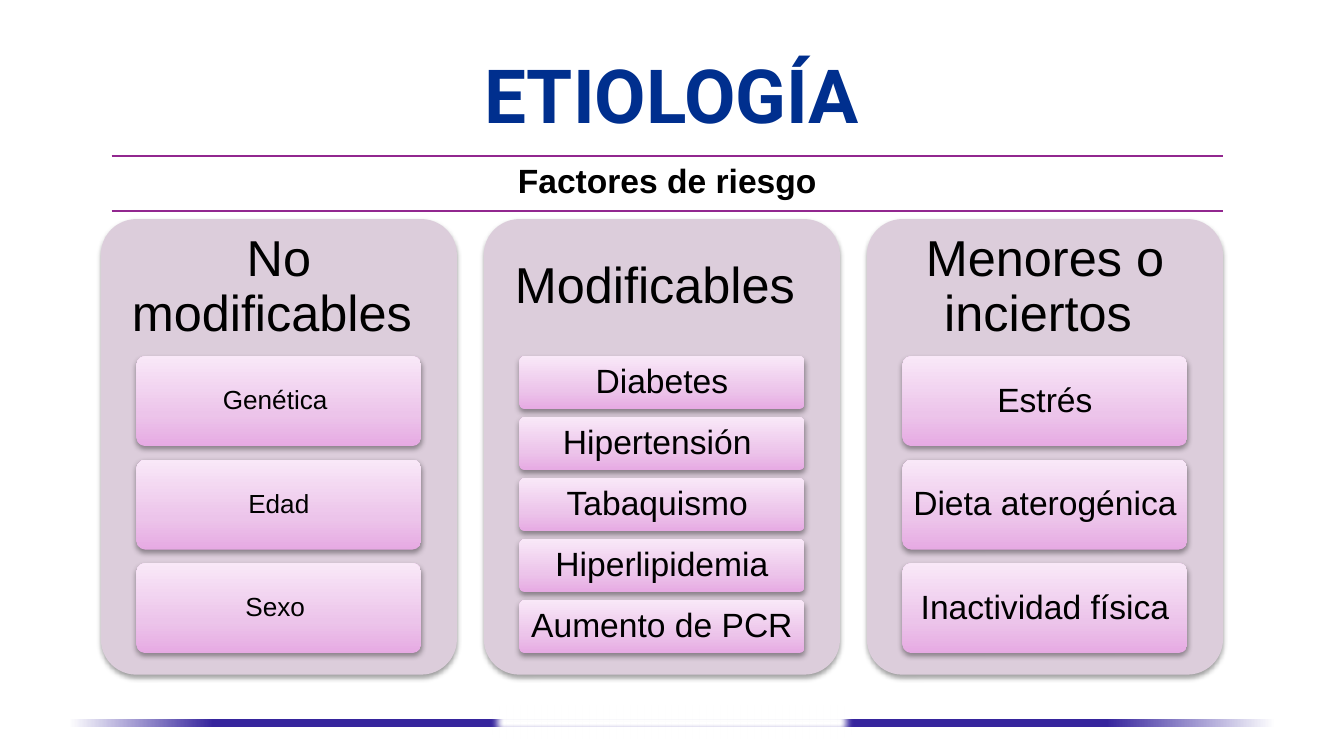
"""Build the slide on aetiology and its three groups of risk factors."""
from pptx import Presentation
from pptx.dml.color import RGBColor
from pptx.enum.shapes import MSO_SHAPE as Shape
from pptx.enum.text import MSO_ANCHOR as Anchor, PP_ALIGN as Align
from pptx.oxml import parse_xml
from pptx.oxml.ns import nsdecls, qn
from pptx.util import Inches, Pt

TITLE = "ETIOLOGÍA"
SUBTITLE = "Factores de riesgo"
GROUPS = [
    ("No modificables ", 14, ["Genética ", "Edad", "Sexo "]),
    ("Modificables ", 18, ["Diabetes", "Hipertensión ", "Tabaquismo ",
                           "Hiperlipidemia", "Aumento de PCR"]),
    ("Menores o inciertos ", 18, ["Estrés", "Dieta aterogénica", "Inactividad física"]),
]
COLORS = {"title": "002F8E", "outline": "FDFCFD", "text": "000000", "rule": "92278F",
          "panel": "DCCDDB", "band": "36259D", "white": "FFFFFF", "shadow": "000000",
          "card_low": "E6AAE3", "card_mid": "ECC4EA", "card_high": "F9E8F8"}
BAND_STOPS = [(0, "white"), (12, "band"), (50, "band"), (86, "band"), (100, "white")]
CARD_STOPS = [(0, "card_low"), (35, "card_mid"), (100, "card_high")]

SLIDE_WIDTH = Inches(10)
PANEL_LEFT, PANEL_TOP, PANEL_WIDTH, PANEL_HEIGHT = 0.75, 1.63, 2.65, 3.39
PANEL_STEP, HEADING_HEIGHT = 2.85, 1.02
CARD_WIDTH, CARDS_HEIGHT, GAP_RATIO = 2.12, 2.21, 0.15


def solid_xml(color):
    return f'<a:solidFill><a:srgbClr val="{COLORS[color]}"/></a:solidFill>'


def add_block(slide, kind, box, color=None):
    block = slide.shapes.add_shape(kind, *map(Inches, box))
    block.shadow.inherit = False
    block.line.fill.background()
    if kind == Shape.ROUNDED_RECTANGLE:
        block.adjustments[0] = 0.1
    if color:
        block.fill.solid()
        block.fill.fore_color.rgb = RGBColor.from_string(COLORS[color])
    return block


def set_gradient(block, stops, angle):
    block.fill.background()
    props = block._element.spPr
    marks = "".join(f'<a:gs pos="{pos * 1000}"><a:srgbClr val="{COLORS[color]}"/></a:gs>'
                    for pos, color in stops)
    props.replace(props.find(qn("a:noFill")), parse_xml(
        f'<a:gradFill {nsdecls("a")} rotWithShape="1"><a:gsLst>{marks}</a:gsLst>'
        f'<a:lin ang="{angle * 60000}" scaled="0"/></a:gradFill>'))


def add_effect(block, xml):
    block._element.spPr.find(qn("a:effectLst")).append(parse_xml(xml))


def add_shadow(block):
    add_effect(block, f'<a:outerShdw {nsdecls("a")} blurRad="{Pt(3.1)}" dist="{Pt(1.6)}" '
                      f'dir="5400000" rotWithShape="0"><a:srgbClr val="{COLORS["shadow"]}">'
                      '<a:alpha val="38000"/></a:srgbClr></a:outerShdw>')


def write(frame, text, size, color="text", font="Arial", bold=False, spacing=None):
    frame.text = text
    line = frame.paragraphs[0]
    line.alignment = Align.CENTER
    line.line_spacing = spacing
    run = line.runs[0]
    run.font.size, run.font.name, run.font.bold = Pt(size), font, bold
    run.font.color.rgb = RGBColor.from_string(COLORS[color])
    return run


def set_frame(frame, side, end):
    frame.word_wrap = True
    frame.vertical_anchor = Anchor.MIDDLE
    frame.margin_left = frame.margin_right = Inches(side)
    frame.margin_top = frame.margin_bottom = Inches(end)


def add_text_box(slide, box, side, end):
    frame = slide.shapes.add_textbox(*map(Inches, box)).text_frame
    set_frame(frame, side, end)
    return frame


def add_group(slide, left, heading, size, factors):
    add_shadow(add_block(slide, Shape.ROUNDED_RECTANGLE,
                         (left, PANEL_TOP, PANEL_WIDTH, PANEL_HEIGHT), "panel"))
    frame = add_text_box(slide, (left, PANEL_TOP, PANEL_WIDTH, HEADING_HEIGHT), 0.11, 0.11)
    write(frame, heading, 27, spacing=0.9)
    count = len(factors)
    height = CARDS_HEIGHT / (count + GAP_RATIO * (count - 1))
    card_left = left + (PANEL_WIDTH - CARD_WIDTH) / 2
    for row, factor in enumerate(factors):
        top = PANEL_TOP + HEADING_HEIGHT + row * height * (1 + GAP_RATIO)
        card = add_block(slide, Shape.ROUNDED_RECTANGLE,
                         (card_left, top, CARD_WIDTH, height))
        set_gradient(card, CARD_STOPS, 270)
        add_shadow(card)
        set_frame(card.text_frame, 0.06, 0.05)
        write(card.text_frame, factor, size, spacing=0.9)


def add_subtitle(slide):
    table = slide.shapes.add_table(1, 1, *map(Inches, (0.83, 1.16, 8.27, 0.41))).table
    table.first_row = table.horz_banding = False
    cell = table.cell(0, 0)
    write(cell.text_frame, SUBTITLE, 18, bold=True)
    cell.fill.background()
    props = cell._tc.get_or_add_tcPr()
    for index, side in enumerate("LRTB"):
        paint = solid_xml("rule") if side in "TB" else "<a:noFill/>"
        props.insert(index, parse_xml(
            f'<a:ln{side} {nsdecls("a")} w="{Pt(1)}">{paint}</a:ln{side}>'))


def main():
    deck = Presentation()
    deck.slide_width, deck.slide_height = SLIDE_WIDTH, SLIDE_WIDTH * 9 // 16
    slide = deck.slides.add_slide(deck.slide_layouts[6])

    set_gradient(add_block(slide, Shape.RECTANGLE, (0.51, 5.35, 8.98, 0.06)), BAND_STOPS, 0)
    window = add_block(slide, Shape.RECTANGLE, (3.62, 5.23, 2.76, 0.29), "white")
    add_effect(window, f'<a:softEdge {nsdecls("a")} rad="{Inches(0.07)}"/>')

    title = write(add_text_box(slide, (0.5, 0.23, 9, 0.94), 0.1, 0.05),
                  TITLE, 40, "title", "Roboto", True)
    title.font._element.insert(0, parse_xml(
        f'<a:ln {nsdecls("a")} w="{Pt(1.4)}">{solid_xml("outline")}</a:ln>'))

    for column, (heading, size, factors) in enumerate(GROUPS):
        add_group(slide, PANEL_LEFT + column * PANEL_STEP, heading, size, factors)
    add_subtitle(slide)
    deck.save("out.pptx")


if __name__ == "__main__":
    main()
